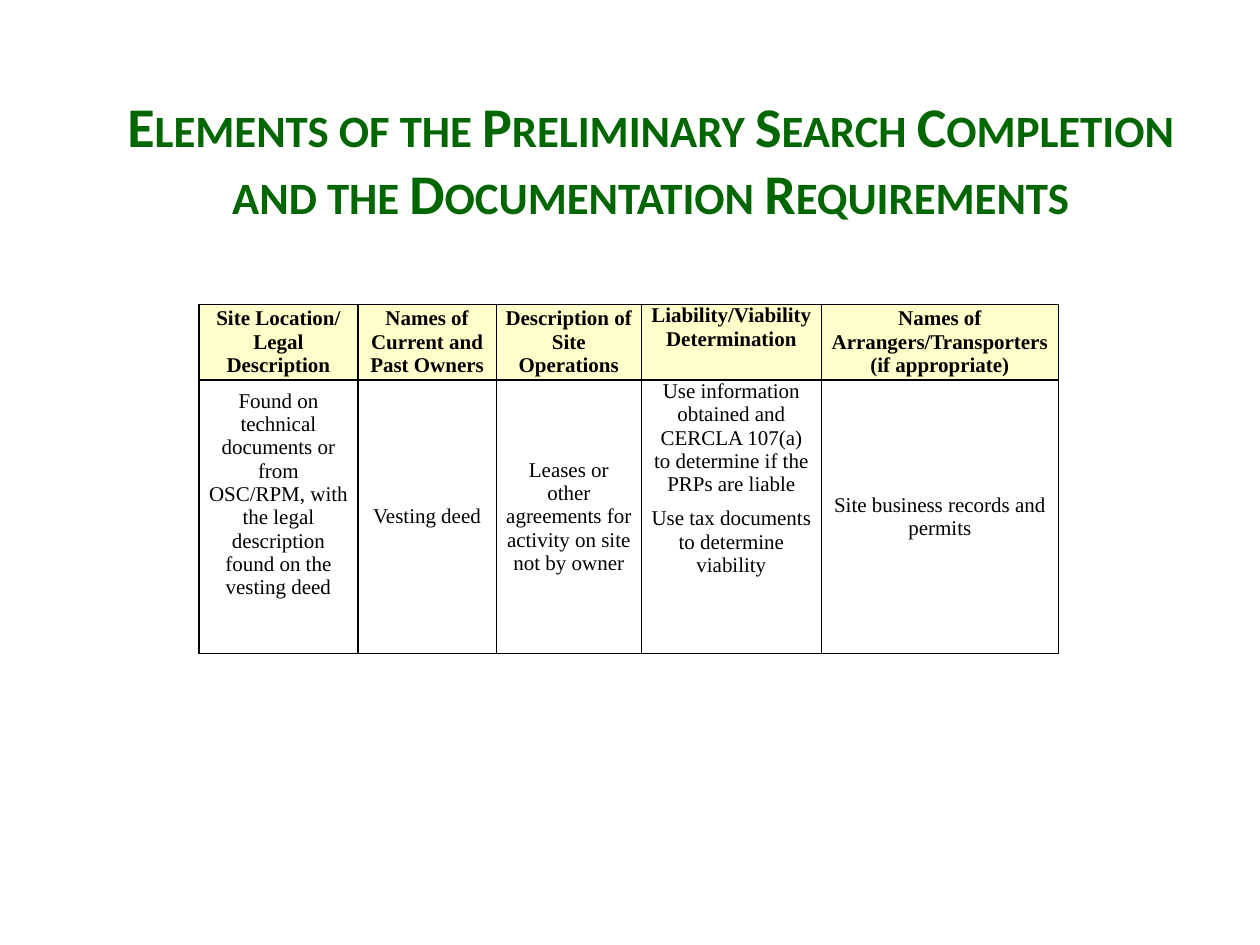
from dataclasses import dataclass

from lxml.etree import SubElement
from pptx import Presentation
from pptx.dml.color import RGBColor
from pptx.enum.text import MSO_ANCHOR as Anchor, PP_ALIGN as Align
from pptx.oxml.ns import qn
from pptx.util import Inches, Pt


@dataclass(frozen=True)
class Theme:
    title_font: str = "Calibri"
    table_font: str = "Times New Roman"
    title_size: int = 32
    table_size: int = 12
    border_width: int = 1
    title_color: str = "006600"
    text_color: str = "000000"
    header_fill: str = "FFFFCC"


THEME = Theme()
WIDTH, HEIGHT = 10, 7.5
TITLE = ("Elements of the Preliminary Search Completion "
         "and the Documentation Requirements")
COLUMNS = [1.26, 1.1, 1.15, 1.43, 1.88]
ROWS = [0.6, 2.17]
TOP_COLUMN = 3  # the liability column is anchored to the top
HEADERS = [
    "Site Location/\nLegal Description",
    "Names of Current and Past Owners",
    "Description of Site Operations",
    "Liability/Viability Determination",
    "Names of Arrangers/Transporters (if appropriate)",
]
# Text, space before each paragraph in points, bottom margin in inches
DETAILS = [
    ("Found on technical documents or from OSC/RPM, with the legal "
     "description found on the vesting deed", 12, 0.35),
    ("Vesting deed", 6, 0),
    ("Leases or other agreements for activity on site not by owner", 0, 0),
    ("Use information obtained and CERCLA 107(a) to determine if the PRPs "
     "are liable\nUse tax documents to determine viability", 6, 0),
    ("Site business records and permits", 6, 0),
]


def format_text(text_frame, font_name, size, color, bold, space_before=0):
    for paragraph in text_frame.paragraphs:
        paragraph.alignment = Align.CENTER
        paragraph.space_before = Pt(space_before)
        for run in paragraph.runs:
            font = run.font
            font.name, font.size, font.bold = font_name, Pt(size), bold
            font.color.rgb = RGBColor.from_string(color)


def add_title(slide):
    box = slide.shapes.add_textbox(
        Inches(0.075 * WIDTH), Inches(0.09 * HEIGHT),
        Inches(0.883 * WIDTH), Inches(0.157 * HEIGHT))
    text_frame = box.text_frame
    text_frame.word_wrap = True
    text_frame.text = TITLE
    format_text(text_frame, THEME.title_font, THEME.title_size,
                THEME.title_color, True)
    text_frame.paragraphs[0].runs[0].font._element.set("cap", "small")


def add_borders(cell):
    properties = cell._tc.get_or_add_tcPr()
    for position, side in enumerate(("lnL", "lnR", "lnT", "lnB")):
        line = properties.makeelement(
            qn(f"a:{side}"), {"w": str(Pt(THEME.border_width))})
        fill = SubElement(line, qn("a:solidFill"))
        SubElement(fill, qn("a:srgbClr"), val=THEME.text_color)
        properties.insert(position, line)  # borders precede the fill


def fill_cell(cell, text, anchor, header=False, space_before=0, bottom=0):
    cell.margin_left = cell.margin_right = Inches(0.07)
    cell.margin_top, cell.margin_bottom = 0, Inches(bottom)
    cell.vertical_anchor = anchor
    if header:
        cell.fill.solid()
        cell.fill.fore_color.rgb = RGBColor.from_string(THEME.header_fill)
    else:
        cell.fill.background()
    cell.text_frame.text = text
    format_text(cell.text_frame, THEME.table_font, THEME.table_size,
                THEME.text_color, header, space_before)
    add_borders(cell)


def add_requirements_table(slide):
    table = slide.shapes.add_table(
        len(ROWS), len(COLUMNS),
        Inches(0.158 * WIDTH), Inches(0.322 * HEIGHT),
        Inches(sum(COLUMNS)), Inches(sum(ROWS))).table
    table.horz_banding = False
    for column, width in zip(table.columns, COLUMNS):
        column.width = Inches(width)
    for row, height in zip(table.rows, ROWS):
        row.height = Inches(height)
    for index, (header, detail) in enumerate(zip(HEADERS, DETAILS)):
        text, space_before, bottom = detail
        anchor = Anchor.TOP if index == TOP_COLUMN else Anchor.MIDDLE
        fill_cell(table.cell(0, index), header, anchor, header=True)
        fill_cell(table.cell(1, index), text, anchor,
                  space_before=space_before, bottom=bottom)


def main():
    presentation = Presentation()
    presentation.slide_width = Inches(WIDTH)
    presentation.slide_height = Inches(HEIGHT)
    slide = presentation.slides.add_slide(presentation.slide_layouts[6])
    add_title(slide)
    add_requirements_table(slide)
    presentation.save("out.pptx")


if __name__ == "__main__":
    main()
